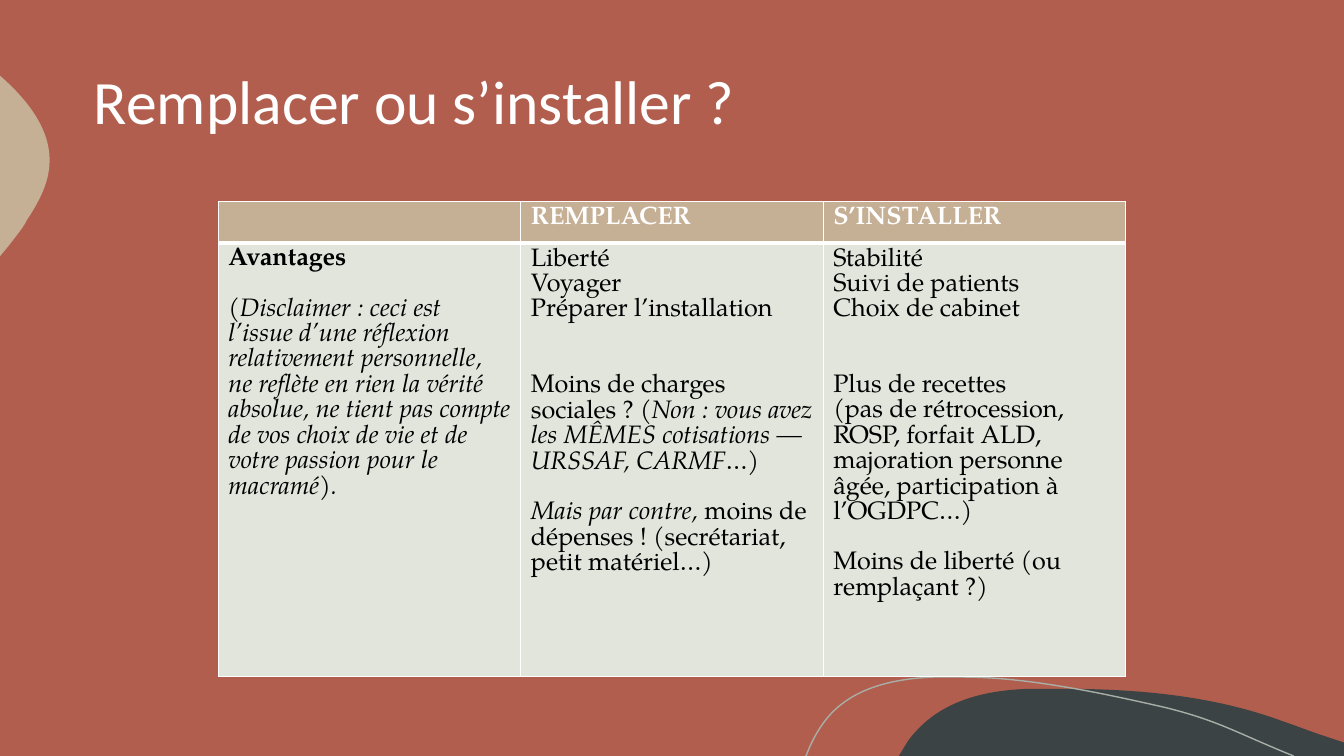
from pptx import Presentation
from pptx import util as u
from pptx.dml.color import RGBColor
from pptx.enum import text
from pptx.oxml import parse_xml
from pptx.oxml.ns import nsdecls

COLORS = {
    "background": "B15E4E",
    "dark": "3B4345",
    "sand": "C5B096",
    "curve": "A9AEA7",
    "body": "E1E5DC",
    "white": "FFFFFF",
    "black": "000000",
}
COLUMNS, ROWS = 16, 9
UNIT = u.Inches(13.33) / COLUMNS

DARK_HILL = [
    (12.65, 8.2), (13.54, 8.2, 14.45, 8.28, 15.28, 8.59),
    (15.43, 8.64, 15.58, 8.7, 15.73, 8.75), (16, 8.84), (16, 9), (10.7, 9),
    (10.78, 8.87), (10.82, 8.8, 10.87, 8.74, 10.93, 8.68),
    (11.27, 8.32, 11.78, 8.21, 12.28, 8.2), (12.4, 8.2, 12.52, 8.2, 12.65, 8.2),
]
SAND_BULGE = [
    (0, 0.9), (0.01, 0.91), (0.36, 1.22, 0.65, 1.6, 0.58, 2.04),
    (0.55, 2.24, 0.44, 2.44, 0.32, 2.62), (0.29, 2.69, 0.2, 2.8, 0.1, 2.93),
    (0, 3.05),
]
THIN_CURVE = [
    (9.59, 9), (9.6, 8.99), (9.67, 8.8, 9.77, 8.63, 9.89, 8.5),
    (10.2, 8.17, 10.67, 8.08, 11.11, 8.06), (11.46, 8.06),
    (12.26, 8.06, 13.2, 8.27, 13.86, 8.42),
    (14.51, 8.58, 14.71, 8.72, 15.4, 9),
]

HEADERS = ["", "REMPLACER", "S’INSTALLER"]
BODY = [
    [
        (0, [("Avantages", "bold")]),
        (1, [("(Disclaimer : ceci est l’issue d’une réflexion relativement "
              "personnelle, ne reflète en rien la vérité absolue, ne tient pas "
              "compte de vos choix de vie et de votre passion pour le macramé).",
              "italic")]),
    ],
    [
        (0, [("Liberté", "")]),
        (0, [("Voyager", "")]),
        (0, [("Préparer l’installation", "")]),
        (2, [("Moins de charges sociales ?", ""),
             (" (Non : vous avez les MÊMES cotisations — URSSAF, CARMF…)", "italic")]),
        (1, [("Mais par contre, ", "italic"),
             ("moins de dépenses ! (secrétariat, petit matériel…)", "")]),
    ],
    [
        (0, [("Stabilité", "")]),
        (0, [("Suivi de patients", "")]),
        (0, [("Choix de cabinet", "")]),
        (2, [("Plus de recettes", "")]),
        (0, [("(pas de rétrocession, ROSP, forfait ALD, majoration personne "
              "âgée, participation à l’OGDPC…)", "")]),
        (1, [("Moins de liberté (ou remplaçant ?)", "")]),
    ],
]


def grid(units):
    return round(units * UNIT)


def color(name):
    return RGBColor.from_string(COLORS[name])


class SlideBuilder:
    """Draws styled elements on one slide, measured in grid units."""

    title_font = "Calibri"
    table_font = "TeX Gyre Pagella"
    title_size = 44
    table_size = 18

    def __init__(self, presentation):
        self.slide = presentation.slides.add_slide(presentation.slide_layouts[6])
        self.slide.background.fill.solid()
        self.slide.background.fill.fore_color.rgb = color("background")

    def outline(self, segments, fill=None, line=None):
        segments = [tuple(map(grid, segment)) for segment in segments]
        builder = self.slide.shapes.build_freeform(*segments[0], scale=1.0)
        builder.add_line_segments(
            [segment[-2:] for segment in segments[1:]], close=fill is not None)
        shape = builder.convert_to_shape()
        self.bend(shape, segments[1:])
        shape.shadow.inherit = False
        if fill:
            shape.fill.solid()
            shape.fill.fore_color.rgb = color(fill)
        else:
            shape.fill.background()
        if line:
            shape.line.color.rgb = color(line)
            shape.line.width = u.Pt(1)
        else:
            shape.line.fill.background()

    def bend(self, shape, segments):
        for straight, segment in zip(shape._element.xpath(".//a:lnTo"), segments):
            if len(segment) == 6:
                points = "".join(
                    f'<a:pt x="{x - shape.left}" y="{y - shape.top}"/>'
                    for x, y in zip(segment[::2], segment[1::2])
                )
                curve = parse_xml(
                    f'<a:cubicBezTo {nsdecls("a")}>{points}</a:cubicBezTo>')
                straight.getparent().replace(straight, curve)

    def style(self, run, font, size, ink, emphasis=""):
        run.font.name = font
        run.font.size = u.Pt(size)
        run.font.color.rgb = color(ink)
        run.font.bold = emphasis == "bold"
        run.font.italic = emphasis == "italic"

    def title(self, words, left, top, width, height):
        shape = self.slide.shapes.add_textbox(*map(grid, (left, top, width, height)))
        frame = shape.text_frame
        frame.word_wrap = True
        frame.vertical_anchor = text.MSO_ANCHOR.MIDDLE
        frame.text = words
        paragraph = frame.paragraphs[0]
        paragraph.line_spacing = 0.9
        self.style(paragraph.runs[0], self.title_font, self.title_size, "white")

    def cell(self, cell, paragraphs, fill, ink, top, bottom):
        properties = cell._tc.get_or_add_tcPr()
        for side, width in (("L", 1), ("R", 1), ("T", top), ("B", bottom)):
            properties.append(parse_xml(
                f'<a:ln{side} {nsdecls("a")} w="{u.Pt(width)}"><a:solidFill>'
                f'<a:srgbClr val="{COLORS["white"]}"/></a:solidFill></a:ln{side}>'
            ))
        cell.fill.solid()
        cell.fill.fore_color.rgb = color(fill)
        frame = cell.text_frame
        for index, (gap, runs) in enumerate(paragraphs):
            paragraph = frame.add_paragraph() if index else frame.paragraphs[0]
            if gap:
                paragraph.space_before = u.Pt(gap * self.table_size)
            for words, emphasis in runs:
                run = paragraph.add_run()
                run.text = words
                self.style(run, self.table_font, self.table_size, ink, emphasis)

    def table(self, headers, body, left, top, width, heights):
        frame = self.slide.shapes.add_table(
            len(heights), len(headers), *map(grid, (left, top, width, sum(heights))))
        table = frame.table
        for row, height in zip(table.rows, heights):
            row.height = grid(height)
        for index, (header, paragraphs) in enumerate(zip(headers, body)):
            heading = [(0, [(header, "bold")])] if header else []
            self.cell(table.cell(0, index), heading, "sand", "white", 1, 3)
            self.cell(table.cell(1, index), paragraphs, "body", "black", 3, 1)


def main():
    presentation = Presentation()
    presentation.slide_width = grid(COLUMNS)
    presentation.slide_height = grid(ROWS)
    builder = SlideBuilder(presentation)
    builder.outline(DARK_HILL, fill="dark")
    builder.outline(SAND_BULGE, fill="sand")
    builder.outline(THIN_CURVE, line="curve")
    builder.title("Remplacer ou s’installer ?", 1, 0.25, 14, 2)
    builder.table(HEADERS, BODY, 2.6, 2.4, 10.8, (0.49, 5.16))
    presentation.save("out.pptx")


if __name__ == "__main__":
    main()
